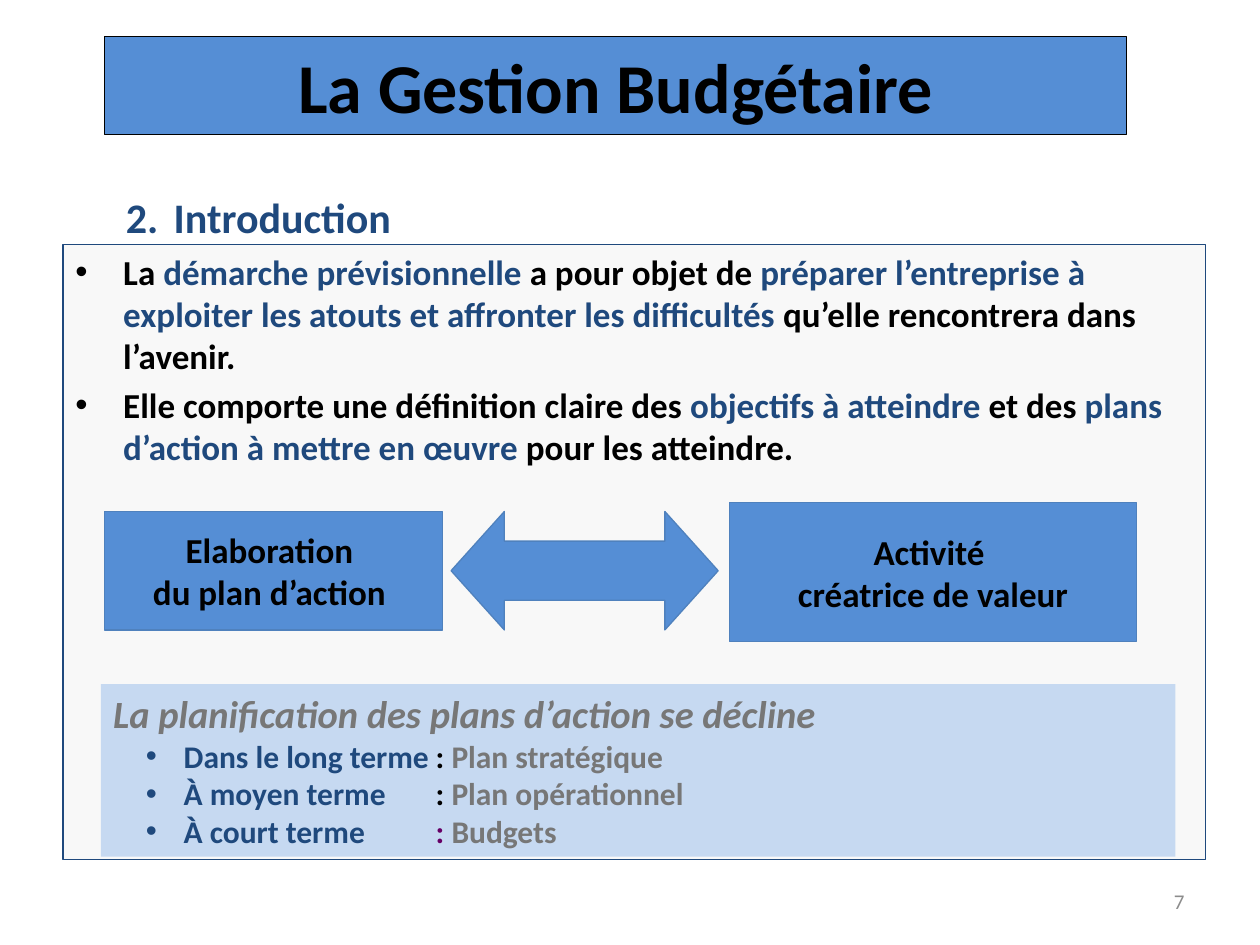
"""Build the slide introducing budget management."""
import pptx
import pptx.dml.color
import pptx.enum.shapes
import pptx.enum.text
import pptx.util
from lxml import etree

Inches = pptx.util.Inches
Pt = pptx.util.Pt
SHAPES = pptx.enum.shapes.MSO_SHAPE
ALIGN = pptx.enum.text.PP_ALIGN
ANCHOR = pptx.enum.text.MSO_ANCHOR

THEME = {
    "font": "Calibri",
    "colours": {
        "black": "000000", "navy": "1F497D", "grey": "777777", "purple": "660066",
        "number": "8C8C8C", "blue": "558ED5", "edge": "4F81BD", "pale": "C6D9F1",
        "panel": "F8F8F8",
    },
    "sizes": {"title": 40, "heading": 24, "body": 20, "lead": 22, "list": 18, "number": 12},
    "line": 0.75,
}

TITLE = "La Gestion Budgétaire"
HEADING = "Introduction"
PAGE_NUMBER = "7"
BODY = [
    [
        ("La ", "black"),
        ("démarche prévisionnelle ", "navy"),
        ("a pour objet de ", "black"),
        ("préparer l’entreprise à exploiter les atouts et affronter les difficultés ", "navy"),
        ("qu’elle rencontrera dans l’avenir.", "black"),
    ],
    [
        ("Elle comporte une définition claire des ", "black"),
        ("objectifs à atteindre ", "navy"),
        ("et des ", "black"),
        ("plans d’action à mettre en œuvre ", "navy"),
        ("pour les atteindre.", "black"),
    ],
]
BLOCKS = [
    ((0.83, 4.06, 2.68, 0.94), ["Elaboration ", "du plan d’action "]),
    ((5.79, 3.99, 3.23, 1.1), ["Activité ", "créatrice de valeur"]),
]
ARROW = (3.58, 4.06, 2.12, 0.94)
LEAD = "La planification des plans d’action se décline"
HORIZONS = [
    ("Dans le long terme", "black", "Plan stratégique"),
    ("À moyen terme", "black", "Plan opérationnel"),
    ("À court terme", "purple", "Budgets"),
]
COLON_TAB = 2.56


def colour(name):
    """Return a theme colour."""
    return pptx.dml.color.RGBColor.from_string(THEME["colours"][name])


def place(shape, area):
    """Set left, top, width and height in inches."""
    shape.left, shape.top, shape.width, shape.height = map(Inches, area)


def paint(shape, fill, line=None):
    """Give a shape its fill and outline."""
    shape.fill.solid()
    shape.fill.fore_color.rgb = colour(fill)
    if line:
        shape.line.color.rgb = colour(line)
        shape.line.width = Pt(THEME["line"])
    else:
        shape.line.fill.background()


def add_shape(page, kind, area, fill, line=None):
    """Add a flat preset shape."""
    shape = page.shapes.add_shape(kind, *map(Inches, area))
    shape.shadow.inherit = False
    paint(shape, fill, line)
    return shape


def add_textbox(page, area):
    """Add an empty text box."""
    return page.shapes.add_textbox(*map(Inches, area))


def prepare(shape, anchor=ANCHOR.TOP, wrap=True):
    """Set how text sits in a shape and return its frame."""
    frame = shape.text_frame
    frame.auto_size = pptx.enum.text.MSO_AUTO_SIZE.NONE
    frame.word_wrap = wrap
    frame.vertical_anchor = anchor
    return frame


def write(frame, index, spans, size, align=ALIGN.LEFT, bold=True, italic=False, before=0):
    """Write one paragraph run by run."""
    para = frame.paragraphs[0] if index == 0 else frame.add_paragraph()
    para.alignment = align
    para.space_before = Pt(before)
    for text, tint in spans:
        span = para.add_run()
        span.text = text
        span.font.name = THEME["font"]
        span.font.size = Pt(THEME["sizes"][size])
        span.font.bold = bold
        span.font.italic = italic
        span.font.color.rgb = colour(tint)
    return para


def mark(para, margin, hang, start=None, tab=None):
    """Add a hanging bullet, or a number when start is given."""
    properties = para._p.get_or_add_pPr()
    properties.set("marL", str(Inches(margin)))
    properties.set("indent", str(-Inches(hang)))

    def add(parent, tag, **values):
        return etree.SubElement(parent, pptx.oxml.ns.qn(tag), **values)

    if start:
        add(properties, "a:buFont", typeface="+mj-lt")
        add(properties, "a:buAutoNum", type="arabicPeriod", startAt=str(start))
    else:
        add(properties, "a:buFont", typeface="Arial")
        add(properties, "a:buChar", char="•")
    if tab:
        tabs = add(properties, "a:tabLst")
        add(tabs, "a:tab", pos=str(Inches(tab)), algn="l")


def main():
    """Compose and save the slide."""
    deck = pptx.Presentation()
    deck.slide_width, deck.slide_height = Inches(10), Inches(7.5)
    page = deck.slides.add_slide(deck.slide_layouts[5])

    panel = add_shape(page, SHAPES.RECTANGLE, (0.5, 1.94, 9.07, 4.88), "panel", "navy")
    frame = prepare(panel)
    for index, spans in enumerate(BODY):
        mark(write(frame, index, spans, "body", before=4), 0.38, 0.38)

    heading = prepare(add_textbox(page, (0.9, 1.47, 2.68, 0.5)))
    mark(write(heading, 0, [(HEADING, "navy")], "heading"), 0.38, 0.38, start=2)

    for area, lines in BLOCKS:
        block = add_shape(page, SHAPES.RECTANGLE, area, "blue", "edge")
        frame = prepare(block, ANCHOR.MIDDLE, wrap=False)
        for index, line in enumerate(lines):
            write(frame, index, [(line, "black")], "body", ALIGN.CENTER)

    arrow = add_shape(page, SHAPES.LEFT_RIGHT_ARROW, ARROW, "blue", "edge")
    arrow.adjustments[0], arrow.adjustments[1] = 0.5, 0.45

    frame = prepare(add_shape(page, SHAPES.RECTANGLE, (0.8, 5.43, 8.53, 1.37), "pale"))
    write(frame, 0, [(LEAD, "grey")], "lead", italic=True)
    for index, (term, tint, plan) in enumerate(HORIZONS, 1):
        spans = [(term + "\t", "navy"), (": ", tint), (plan, "grey")]
        mark(write(frame, index, spans, "list"), 0.56, 0.3, tab=COLON_TAB)

    title = page.shapes.title
    place(title, (0.83, 0.29, 8.11, 0.78))
    paint(title, "blue", "black")
    write(prepare(title, ANCHOR.MIDDLE), 0, [(TITLE, "black")], "title", ALIGN.CENTER)

    number = prepare(add_textbox(page, (7.17, 6.95, 2.33, 0.4)), ANCHOR.MIDDLE)
    write(number, 0, [(PAGE_NUMBER, "number")], "number", ALIGN.RIGHT, bold=False)

    deck.save("out.pptx")


if __name__ == "__main__":
    main()
